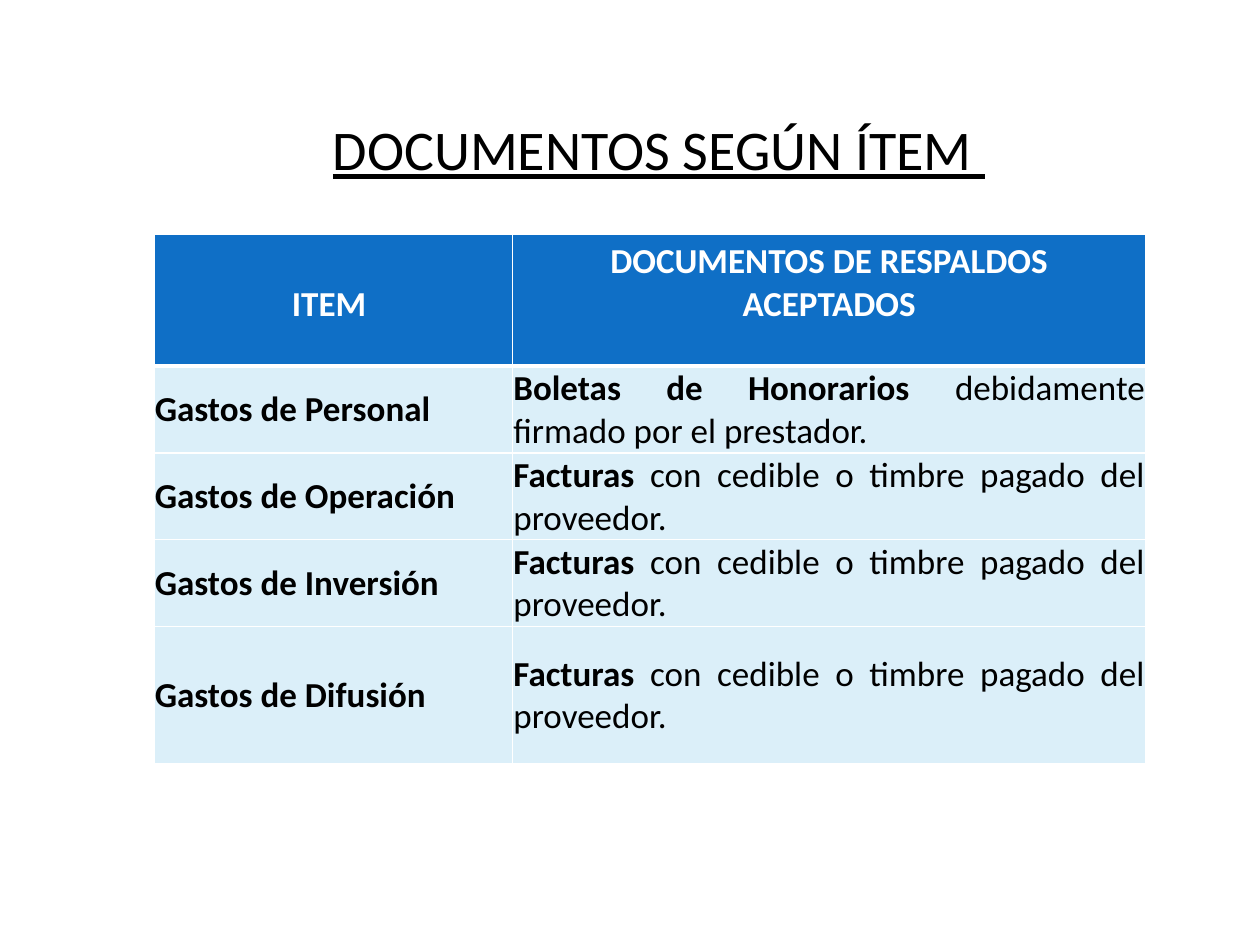
from dataclasses import dataclass

import pptx
import pptx.util
import pptx.dml.color
import pptx.enum.text
from lxml import etree
from pptx.oxml.ns import qn

Cm, Pt = pptx.util.Cm, pptx.util.Pt
RGB = pptx.dml.color.RGBColor.from_string
ALIGN = pptx.enum.text.PP_ALIGN
ANCHOR = pptx.enum.text.MSO_ANCHOR


@dataclass(frozen=True)
class Theme:
    font: str = "Calibri"
    title: int = 32
    body: int = 20
    dark: str = "000000"
    light: str = "FFFFFF"
    header: str = "0F6FC6"
    row: str = "DBEFF9"


THEME = Theme()
INVOICE = ("Facturas", " con cedible o timbre pagado del proveedor.")
ITEMS = [
    ("Gastos de Personal",
     ("Boletas de Honorarios ", "debidamente firmado por el prestador.")),
    ("Gastos de Operación", INVOICE),
    ("Gastos de Inversión", INVOICE),
    ("Gastos de Difusión", INVOICE),
]
COLUMNS = (7.23, 12.77)
ROWS = (2.66, 1.65, 1.65, 1.65, 2.77)


def style(p, size, color, align):
    p.alignment = align
    p.font.name, p.font.size = THEME.font, Pt(size)
    p.font.color.rgb = RGB(color)


def set_borders(cell, top=1, bottom=1):
    """Draw light borders, with widths in points; the sides are always 1."""
    tcPr = cell._tc.get_or_add_tcPr()
    for side, width in (("L", 1), ("R", 1), ("T", top), ("B", bottom)):
        ln = etree.SubElement(tcPr, qn(f"a:ln{side}"), w=str(Pt(width)))
        fill = etree.SubElement(ln, qn("a:solidFill"))
        etree.SubElement(fill, qn("a:srgbClr"), val=THEME.light)


def fill_cell(cell, color):
    cell.fill.solid()
    cell.fill.fore_color.rgb = RGB(color)


def header_cell(cell, text, top_margin):
    set_borders(cell, bottom=3)
    fill_cell(cell, THEME.header)
    cell.margin_top = Cm(top_margin)
    p = cell.text_frame.paragraphs[0]
    p.text = text
    style(p, THEME.body, THEME.light, ALIGN.CENTER)
    p.font.bold = True


def body_cell(cell, bold, regular="", align=ALIGN.LEFT, top_border=1):
    set_borders(cell, top=top_border)
    fill_cell(cell, THEME.row)
    cell.vertical_anchor = ANCHOR.MIDDLE
    cell.margin_left = cell.margin_right = cell.margin_top = Cm(0.02)
    cell.margin_bottom = 0
    p = cell.text_frame.paragraphs[0]
    style(p, THEME.body, THEME.dark, align)
    for text, is_bold in ((bold, True), (regular, False)):
        if text:
            r = p.add_run()
            r.text, r.font.bold = text, is_bold


def add_title(s, left, top, width, height):
    tf = s.shapes.add_textbox(Cm(left), Cm(top), Cm(width), Cm(height)).text_frame
    tf.word_wrap = True
    tf.auto_size = pptx.enum.text.MSO_AUTO_SIZE.SHAPE_TO_FIT_TEXT
    p = tf.paragraphs[0]
    p.text = "DOCUMENTOS SEGÚN ÍTEM "
    style(p, THEME.title, THEME.dark, ALIGN.RIGHT)
    p.font.underline = True
    p.line_spacing, p.space_before = 0.9, Pt(7.5)


def add_documents_table(s, left, top):
    table = s.shapes.add_table(len(ROWS), len(COLUMNS), Cm(left), Cm(top),
                               Cm(sum(COLUMNS)), Cm(sum(ROWS))).table
    for column, width in zip(table.columns, COLUMNS):
        column.width = Cm(width)
    for row, height in zip(table.rows, ROWS):
        row.height = Cm(height)
    header_cell(table.cell(0, 0), "ITEM ", top_margin=0.99)
    header_cell(table.cell(0, 1), "DOCUMENTOS DE RESPALDOS ACEPTADOS", top_margin=0.13)
    for i, (item, (document, detail)) in enumerate(ITEMS, 1):
        top_border = 3 if i == 1 else 1
        body_cell(table.cell(i, 0), item, top_border=top_border)
        body_cell(table.cell(i, 1), document, detail, ALIGN.JUSTIFY, top_border)


def main():
    prs = pptx.Presentation()
    prs.slide_width, prs.slide_height = Cm(25.4), Cm(19.05)
    s = prs.slides.add_slide(prs.slide_layouts[6])
    add_documents_table(s, 3.1, 4.72)
    add_title(s, 0.3, 2.34, 19.81, 1.5)
    prs.save("out.pptx")


if __name__ == "__main__":
    main()
